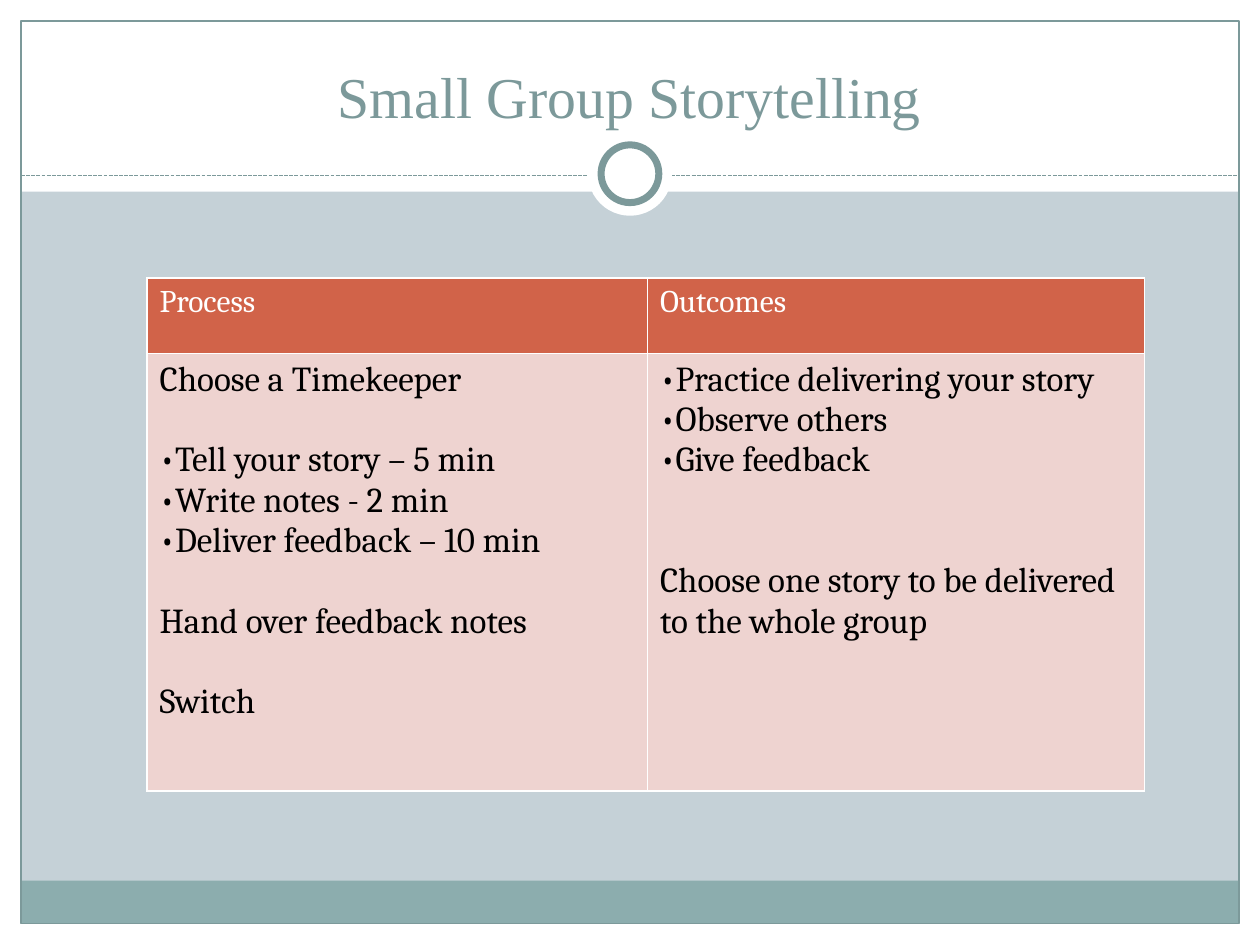
import lxml.etree
import pptx
import pptx.dml.color
import pptx.enum.dml
import pptx.enum.shapes
import pptx.enum.text
import pptx.oxml.ns
import pptx.util

Pt = pptx.util.Pt
qn = pptx.oxml.ns.qn
SHAPE = pptx.enum.shapes.MSO_SHAPE
WHITE, TEAL, BAND = "FFFFFF", "7C999A", "8CADAE"
BODY_FONT = "Cambria"
W, H, EDGE = 720, 540, 12
LINE_PITCH = 23

# Each paragraph: text, bulleted, blank lines above
PROCESS = [
    ("Choose a Timekeeper", False, 0),
    ("Tell your story – 5 min", True, 1),
    ("Write notes - 2 min", True, 0),
    ("Deliver feedback – 10 min", True, 0),
    ("Hand over feedback notes", False, 1),
    ("Switch", False, 1),
]
OUTCOMES = [
    ("Practice delivering your story", True, 0),
    ("Observe others", True, 0),
    ("Give feedback", True, 0),
    ("Choose one story to be delivered to the whole group", False, 2),
]


def rgb(value):
    return pptx.dml.color.RGBColor.from_string(value)


def set_fill(fill, color):
    fill.solid()
    fill.fore_color.rgb = rgb(color)


def add_shape(s, kind, x, y, w, h, fill=None, line=None, line_width=0.75):
    sp = s.shapes.add_shape(kind, Pt(x), Pt(y), Pt(w), Pt(h))
    sp.shadow.inherit = False
    if fill:
        set_fill(sp.fill, fill)
    else:
        sp.fill.background()
    if line:
        sp.line.color.rgb = rgb(line)
        sp.line.width = Pt(line_width)
    else:
        sp.line.fill.background()


def add_circle(s, cx, cy, d, **style):
    add_shape(s, SHAPE.OVAL, cx - d / 2, cy - d / 2, d, d, **style)


def add_dashed_rule(s, y):
    c = s.shapes.add_connector(pptx.enum.shapes.MSO_CONNECTOR.STRAIGHT,
                               Pt(EDGE), Pt(y), Pt(W - EDGE), Pt(y))
    c.line.color.rgb = rgb(TEAL)
    c.line.width = Pt(0.75)
    c.line.dash_style = pptx.enum.dml.MSO_LINE.SQUARE_DOT
    lxml.etree.SubElement(c.element.spPr, qn("a:effectLst"))


def add_frame(s):
    for box in ((0, H - EDGE, W, EDGE), (0, 0, W, 109.5),
                (0, 0, EDGE, H), (W - EDGE, 0, EDGE, H)):
        add_shape(s, SHAPE.RECTANGLE, *box, fill=WHITE)
    add_shape(s, SHAPE.RECTANGLE, EDGE, 503.2, W - 2 * EDGE, 24.5, fill=BAND)
    add_shape(s, SHAPE.RECTANGLE, EDGE, EDGE, W - 2 * EDGE, 515.6, line=TEAL)
    add_dashed_rule(s, 100.5)
    add_circle(s, W / 2, 99.3, 48, fill=WHITE)
    add_circle(s, W / 2, 99.3, 33, fill=WHITE, line=TEAL, line_width=4)


def format_run(r, font, size, color):
    r.font.name = font
    r.font.size = Pt(size)
    r.font.bold = False
    r.font.color.rgb = rgb(color)


def set_title(s, text):
    sp = s.shapes.title
    sp.left, sp.top, sp.width, sp.height = Pt(23.7), Pt(18), Pt(672), Pt(60)
    tf = sp.text_frame
    tf.text = text
    tf.word_wrap = True
    tf.auto_size = pptx.enum.text.MSO_AUTO_SIZE.NONE
    tf.vertical_anchor = pptx.enum.text.MSO_ANCHOR.BOTTOM
    p = tf.paragraphs[0]
    p.alignment = pptx.enum.text.PP_ALIGN.CENTER
    format_run(p.runs[0], "Times New Roman", 33, TEAL)
    # Bring the title in front of the white frame
    sp.element.getparent().append(sp.element)


def set_bullet(p):
    pPr = p._p.get_or_add_pPr()
    pPr.set("marL", "0")
    pPr.set("indent", "0")
    lxml.etree.SubElement(pPr, qn("a:buFont"), typeface=BODY_FONT)
    lxml.etree.SubElement(pPr, qn("a:buChar"), char="•")


def set_borders(cell, color, width):
    tcPr = cell._tc.get_or_add_tcPr()
    for side in ("lnL", "lnR", "lnT", "lnB"):
        ln = lxml.etree.SubElement(tcPr, qn("a:" + side), w=str(Pt(width)))
        solid = lxml.etree.SubElement(ln, qn("a:solidFill"))
        lxml.etree.SubElement(solid, qn("a:srgbClr"), val=color)


def fill_cell(cell, lines, size, color, fill):
    set_borders(cell, WHITE, 1)
    set_fill(cell.fill, fill)
    tf = cell.text_frame
    tf.text = "\n".join(text for text, _, _ in lines)
    for p, (_, bulleted, gap) in zip(tf.paragraphs, lines):
        if gap:
            p.space_before = Pt(gap * LINE_PITCH)
        if bulleted:
            set_bullet(p)
        format_run(p.runs[0], BODY_FONT, size, color)


def add_story_table(s):
    widths, heights = (286, 284), (43, 250)
    table = s.shapes.add_table(2, 2, Pt(84), Pt(159), Pt(sum(widths)),
                               Pt(sum(heights))).table
    for row, height in zip(table.rows, heights):
        row.height = Pt(height)
    columns = (("Process", PROCESS), ("Outcomes", OUTCOMES))
    for i, (heading, lines) in enumerate(columns):
        table.columns[i].width = Pt(widths[i])
        fill_cell(table.cell(0, i), [(heading, False, 0)], 18, WHITE, "D16349")
        fill_cell(table.cell(1, i), lines, 20, "000000", "EED3D0")


def main():
    prs = pptx.Presentation()
    prs.slide_width, prs.slide_height = Pt(W), Pt(H)
    s = prs.slides.add_slide(prs.slide_layouts[5])
    set_fill(s.background.fill, "C5D1D7")
    add_frame(s)
    set_title(s, "Small Group Storytelling")
    add_story_table(s)
    prs.save("out.pptx")


if __name__ == "__main__":
    main()
